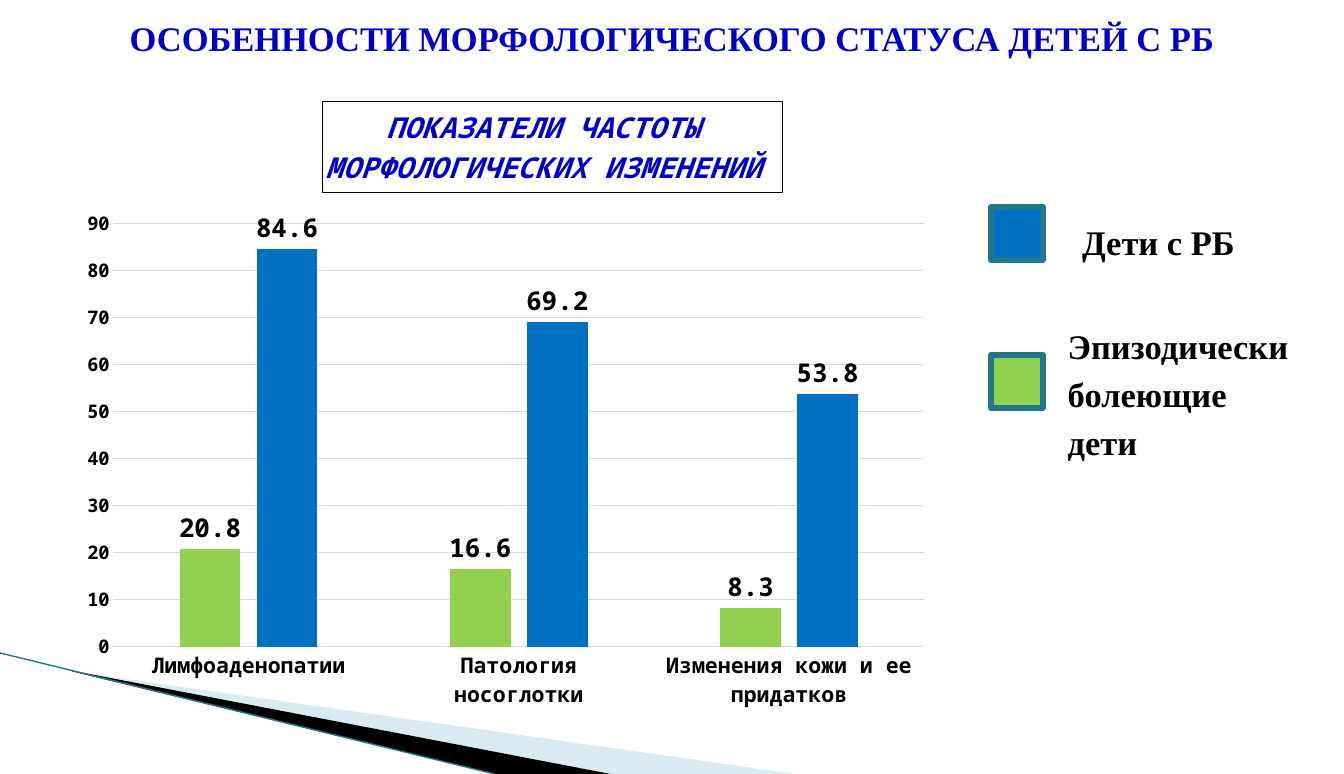
from dataclasses import dataclass

import pptx
import pptx.chart.data
import pptx.dml.color
import pptx.enum.chart
import pptx.enum.shapes
import pptx.enum.text
import pptx.oxml
import pptx.oxml.ns
import pptx.util
from lxml import etree

Inches = pptx.util.Inches
Pt = pptx.util.Pt
RGBColor = pptx.dml.color.RGBColor
qn = pptx.oxml.ns.qn

SERIF = "Times New Roman"
MONO = "Noto Sans Mono"
BLACK = RGBColor(0, 0, 0)
NAVY = RGBColor(0x00, 0x00, 0xCC)
BLUE = RGBColor(0x00, 0x70, 0xC0)
GREEN = RGBColor(0x92, 0xD0, 0x50)
TEAL = RGBColor(0x21, 0x78, 0x8D)
PALE = RGBColor(0xA0, 0xCB, 0xDC)
GRAY = RGBColor(0xD9, 0xD9, 0xD9)
WIDTH, HEIGHT = 12.99, 7.48


@dataclass
class Wedge:
    points: list[tuple[float, float]]
    color: RGBColor
    alpha: int = 100


@dataclass
class Key:
    top: float
    color: RGBColor
    left: float
    head: float
    lines: list[str]


@dataclass
class Group:
    name: str
    values: list[float]
    color: RGBColor


WEDGES = [
    Wedge([(0.71, 6.48), (0.71, 6.49), (7.68, HEIGHT), (5.9, HEIGHT)], PALE, 40),
    Wedge([(0.69, 6.48), (5.9, HEIGHT), (4.78, HEIGHT), (0.7, 6.49)], BLACK),
]
KEYS = [
    Key(2.0, BLUE, 10.46, 2.14, ["Дети с РБ"]),
    Key(3.43, GREEN, 10.32, 3.14, ["Эпизодически", "болеющие", "дети"]),
]
CATS = ["Лимфоаденопатии", "Патология носоглотки", "Изменения кожи и ее придатков"]
GROUPS = [
    Group("Эпизодически болеющие дети", [20.8, 16.6, 8.3], GREEN),
    Group("Дети с РБ", [84.6, 69.2, 53.8], BLUE),
]


def style(font, name: str, size: float, color: RGBColor) -> None:
    font.name, font.size, font.bold = name, Pt(size), True
    font.color.rgb = color


def wedge(slide, item: Wedge) -> None:
    spots = [(Inches(x), Inches(y)) for x, y in item.points]
    maker = slide.shapes.build_freeform(*spots[0])
    maker.add_line_segments(spots[1:], close=True)
    shape = maker.convert_to_shape()
    shape.shadow.inherit = False
    shape.line.fill.background()
    shape.fill.solid()
    shape.fill.fore_color.rgb = item.color
    if item.alpha < 100:
        tint = shape.fill._xPr.find(".//" + qn("a:srgbClr"))
        etree.SubElement(tint, qn("a:alpha"), val=str(item.alpha * 1000))


def text(slide, left: float, top: float, width: float, lines: list[str],
         color: RGBColor, align) -> None:
    box = slide.shapes.add_textbox(Inches(left), Inches(top), Inches(width),
                                   Inches(0.46 * len(lines)))
    frame = box.text_frame
    frame.word_wrap = True
    frame.margin_left = frame.margin_right = 0
    frame.margin_top = frame.margin_bottom = 0
    for i, line in enumerate(lines):
        para = frame.add_paragraph() if i else frame.paragraphs[0]
        para.text = line
        para.alignment = align
        if i:
            para.space_before = Pt(4.5)
        style(para.font, SERIF, 24, color)


def layout(x: float, y: float, w: float = 0, h: float = 0):
    """Manual chart layout in fractions of the chart area."""
    root = pptx.oxml.parse_xml(
        '<c:layout xmlns:c="http://schemas.openxmlformats.org/drawingml/2006/chart"/>')
    manual = etree.SubElement(root, qn("c:manualLayout"))
    parts = [("xMode", "edge"), ("yMode", "edge"), ("x", x), ("y", y)]
    if w:
        parts = [("layoutTarget", "inner"), *parts, ("w", w), ("h", h)]
    for tag, val in parts:
        etree.SubElement(manual, qn("c:" + tag), val=str(val))
    return root


def place(host, node, after: str | None = None) -> None:
    """Swap in a layout, first in its host or after the given tag."""
    for old in host.findall(qn("c:layout")):
        host.remove(old)
    if after:
        host.find(qn(after)).addnext(node)
    else:
        host.insert(0, node)


def graph(slide) -> None:
    data = pptx.chart.data.CategoryChartData()
    data.categories = CATS
    for group in GROUPS:
        data.add_series(group.name, group.values)
    kind = pptx.enum.chart.XL_CHART_TYPE.COLUMN_CLUSTERED
    chart = slide.shapes.add_chart(kind, Inches(0.43), Inches(0.98), Inches(8.66),
                                   Inches(5.91), data).chart
    chart.font.name, chart.font.size = MONO, Pt(10)
    chart.font.color.rgb = BLACK
    chart.has_legend = False

    # Framed title; the closing space keeps slanted letters inside the frame
    title = chart.chart_title
    frame = title.text_frame
    frame.text = "ПОКАЗАТЕЛИ ЧАСТОТЫ \nМОРФОЛОГИЧЕСКИХ ИЗМЕНЕНИЙ "
    for para in frame.paragraphs:
        style(para.font, MONO, 20, NAVY)
        para.font.italic = True
    title.format.line.color.rgb = BLACK
    title.format.line.width = Pt(0.5)
    title.include_in_layout = False
    place(title._element, layout(0.31, 0), "c:tx")
    place(chart._chartSpace.chart.plotArea, layout(0.077, 0.2, 0.905, 0.692))

    # Columns and their values
    plot = chart.plots[0]
    plot.vary_by_categories = False
    plot.gap_width, plot.overlap = 219, -27
    for group, series in zip(GROUPS, plot.series):
        series.format.fill.solid()
        series.format.fill.fore_color.rgb = group.color
        labels = series.data_labels
        labels.show_value = True
        labels.position = pptx.enum.chart.XL_LABEL_POSITION.OUTSIDE_END
        style(labels.font, MONO, 18, BLACK)

    # Axes
    none = pptx.enum.chart.XL_TICK_MARK.NONE
    cat, val = chart.category_axis, chart.value_axis
    for axis, size in ((cat, 15), (val, 13)):
        axis.major_tick_mark = axis.minor_tick_mark = none
        style(axis.tick_labels.font, MONO, size, BLACK)
    val.minimum_scale, val.maximum_scale, val.major_unit = 0, 90, 10
    val.format.line.fill.background()
    for line in (cat.format.line, val.major_gridlines.format.line):
        line.color.rgb = GRAY
        line.width = Pt(0.75)


def square(slide, key: Key) -> None:
    kind = pptx.enum.shapes.MSO_SHAPE.RECTANGLE
    shape = slide.shapes.add_shape(kind, Inches(9.58), Inches(key.top),
                                   Inches(0.5), Inches(0.51))
    shape.shadow.inherit = False
    shape.fill.solid()
    shape.fill.fore_color.rgb = key.color
    shape.line.color.rgb = TEAL
    shape.line.width = Pt(4.33)
    etree.SubElement(shape.line._ln, qn("a:round"))


def main() -> None:
    deck = pptx.Presentation()
    deck.slide_width, deck.slide_height = Inches(WIDTH), Inches(HEIGHT)
    slide = deck.slides.add_slide(deck.slide_layouts[6])
    align = pptx.enum.text.PP_ALIGN

    # Corner decoration
    for item in WEDGES:
        wedge(slide, item)
    edge = slide.shapes.add_connector(pptx.enum.shapes.MSO_CONNECTOR.STRAIGHT, 0,
                                      Inches(6.31), Inches(4.78), Inches(HEIGHT))
    edge.line.color.rgb = TEAL
    edge.line.width = Pt(0.95)
    etree.SubElement(edge._element.spPr, qn("a:effectLst"))

    # Heading, chart and legend
    text(slide, 0, 0.16, WIDTH, ["ОСОБЕННОСТИ МОРФОЛОГИЧЕСКОГО СТАТУСА ДЕТЕЙ С РБ"],
         NAVY, align.CENTER)
    graph(slide)
    for key in KEYS:
        square(slide, key)
        text(slide, key.left, key.head, 2.5, key.lines, BLACK, align.LEFT)
    deck.save("out.pptx")


if __name__ == "__main__":
    main()
